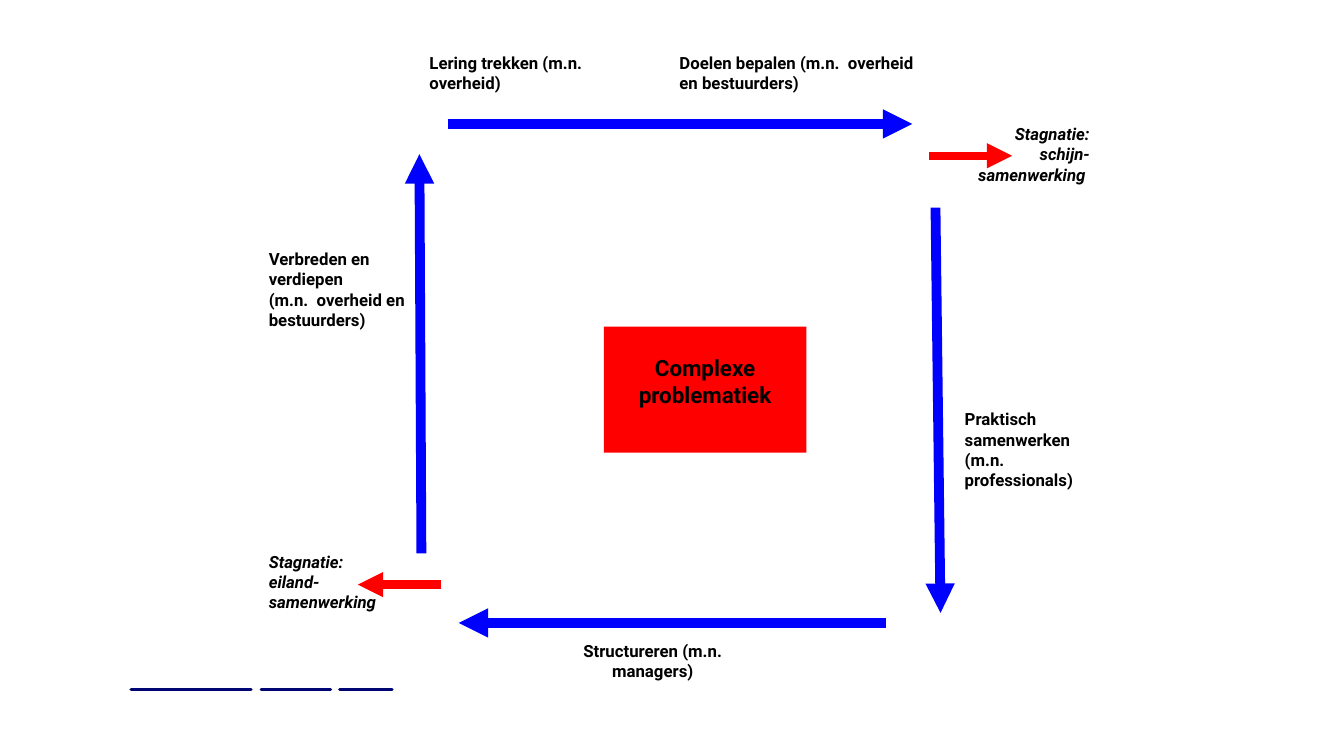
from lxml import etree
from pptx import Presentation
from pptx import util as u
from pptx.dml.color import RGBColor
from pptx.enum import shapes, text
from pptx.oxml import ns

COLOURS = {"navy": "000574", "blue": "0000FF", "red": "FF0000", "black": "000000"}
FONT = "Roboto"
SLIDE_WIDTH, SLIDE_HEIGHT = u.Inches(13.33), u.Inches(7.5)

# Regions: left, top, width, height in percent of the slide
FOOTER_BOX = (9.75, 91.2, 19.43, 0)
CYCLE_BOX = (20, 7, 62.5, 90)


def colour(name):
    return RGBColor.from_string(COLOURS[name])


def locate(box, x, y):
    """Turn percentages of a region into a slide position."""
    left, top, width, height = box
    return (u.Emu(int(SLIDE_WIDTH * (left + width * x / 100) / 100)),
            u.Emu(int(SLIDE_HEIGHT * (top + height * y / 100) / 100)))


def frame(box, x, y, width, height):
    left, top = locate(box, x, y)
    right, bottom = locate(box, x + width, y + height)
    return left, top, right - left, bottom - top


def add_line(slide, start, end, name, weight, arrow=False, cap="flat"):
    line = slide.shapes.add_connector(shapes.MSO_CONNECTOR.STRAIGHT, *start, *end)
    line.line.color.rgb = colour(name)
    line.line.width = u.Pt(weight)
    outline = line.line._get_or_add_ln()
    outline.set("cap", cap)
    if arrow:
        etree.SubElement(outline, ns.qn("a:tailEnd"), type="triangle")
    etree.SubElement(line._element.spPr, ns.qn("a:effectLst"))


def write_text(shape, *lines, size=12, italic=False, align="LEFT", top_inset=0):
    text_frame = shape.text_frame
    text_frame.word_wrap = True
    text_frame.vertical_anchor = text.MSO_ANCHOR.TOP
    text_frame.margin_left = text_frame.margin_right = text_frame.margin_bottom = 0
    text_frame.margin_top = u.Inches(top_inset)
    text_frame.text = "\n".join(lines)
    for paragraph in text_frame.paragraphs:
        paragraph.alignment = text.PP_ALIGN[align]
        font = paragraph.runs[0].font
        font.name, font.size = FONT, u.Pt(size)
        font.bold, font.italic = True, italic
        font.color.rgb = colour("black")


def add_label(slide, place, *lines, **style):
    write_text(slide.shapes.add_textbox(*place), *lines, **style)


def add_footer_dashes(slide, box):
    for start, end in ((0, 45.95), (49.81, 76.45), (79.92, 100)):
        add_line(slide, locate(box, start, 0), locate(box, end, 0), "navy", 2.25, cap="rnd")


def add_cycle(slide, box):
    # Arrows around the cycle, and the two ways out of it
    arrows = [
        ((73.49, 83.78), (22.61, 83.78), "blue", 7),
        ((79.37, 22.74), (79.97, 82.3), "blue", 7),
        ((21.29, 10.44), (76.61, 10.44), "blue", 7),
        ((18.17, 73.56), (17.93, 14.89), "blue", 7),
        ((78.65, 15.11), (88.49, 15.11), "red", 6),
        ((20.45, 78.15), (10.61, 78.15), "red", 6),
    ]
    for start, end, name, weight in arrows:
        add_line(slide, locate(box, *start), locate(box, *end), name, weight, arrow=True)

    # Steps of the cycle
    add_label(slide, frame(box, 19.13, 0, 19.08, 7.85), "Lering trekken (m.n. overheid)")
    add_label(slide, frame(box, 48.89, 0, 29.76, 7.85),
              "Doelen bepalen (m.n.  overheid en bestuurders)")
    add_label(slide, frame(box, 82.85, 52.37, 17.04, 15.7),
              "Praktisch samenwerken", "(m.n. professionals)")
    add_label(slide, frame(box, 36.17, 86.44, 19.08, 13.04),
              "Structureren (m.n. managers)", align="CENTER")
    add_label(slide, frame(box, 0, 28.81, 17.04, 15.7),
              "Verbreden en", "verdiepen", "(m.n.  overheid en bestuurders)")

    # Stagnation labels
    add_label(slide, frame(box, 81.05, 10.44, 16.68, 11.11),
              "Stagnatie:", "schijn-samenwerking ", italic=True, align="RIGHT")
    add_label(slide, frame(box, 0, 73.26, 17.04, 11.11),
              "Stagnatie:", "eiland-samenwerking", italic=True)

    # Core problem
    core = slide.shapes.add_shape(shapes.MSO_SHAPE.RECTANGLE,
                                  *frame(box, 39.89, 40.22, 24.12, 18.52))
    core.shadow.inherit = False
    core.fill.solid()
    core.fill.fore_color.rgb = colour("red")
    core.line.fill.background()
    write_text(core, "Complexe problematiek", size=16, align="CENTER", top_inset=0.27)


def main():
    presentation = Presentation()
    presentation.slide_width, presentation.slide_height = SLIDE_WIDTH, SLIDE_HEIGHT
    slide = presentation.slides.add_slide(presentation.slide_layouts[6])
    add_footer_dashes(slide, FOOTER_BOX)
    add_cycle(slide, CYCLE_BOX)
    presentation.save("out.pptx")


if __name__ == "__main__":
    main()
